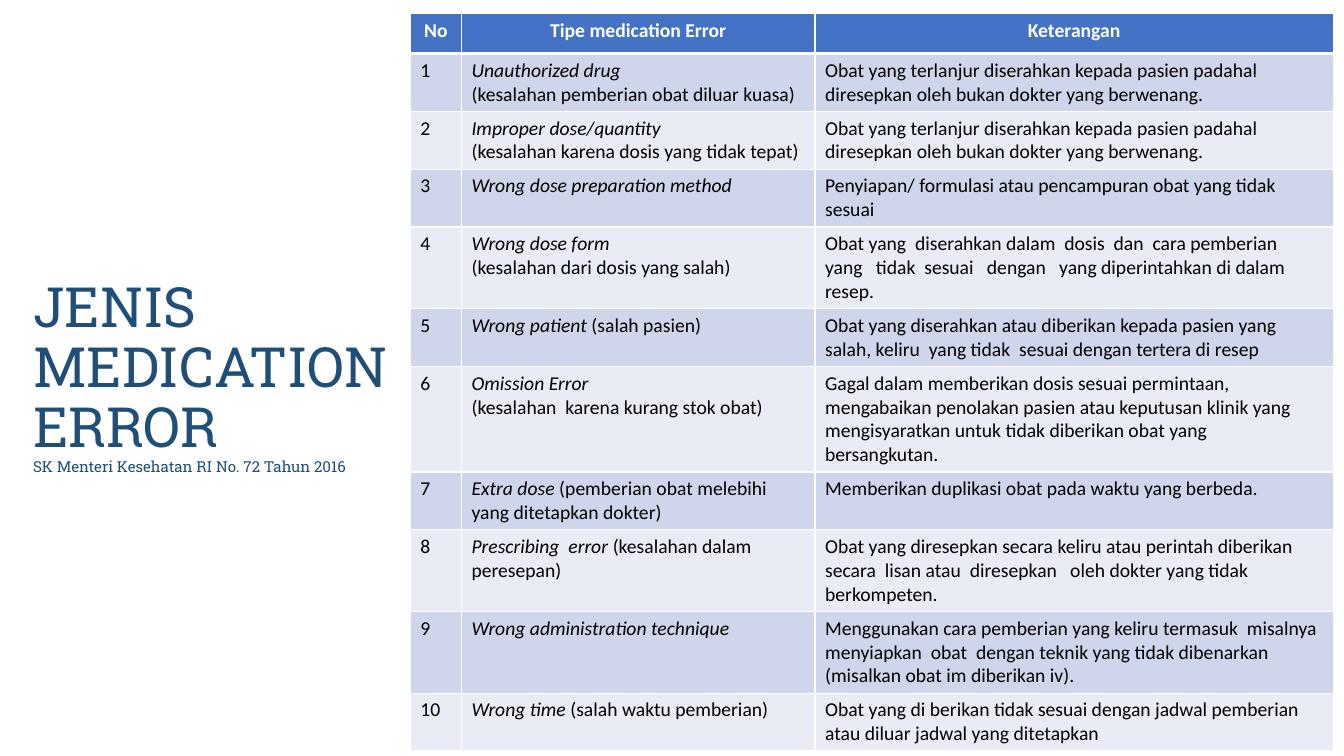
import copy

import pptx
import pptx.dml.color
import pptx.enum.text
import pptx.oxml
import pptx.oxml.ns
import pptx.util

Cm, Pt = pptx.util.Cm, pptx.util.Pt
RGBColor = pptx.dml.color.RGBColor
PP_ALIGN = pptx.enum.text.PP_ALIGN
qn = pptx.oxml.ns.qn

NAVY = RGBColor(0x1F, 0x4E, 0x79)
BLUE = RGBColor(0x44, 0x72, 0xC4)
BAND_DARK = RGBColor(0xCF, 0xD5, 0xEA)
BAND_LIGHT = RGBColor(0xE9, 0xEB, 0xF5)
WHITE = RGBColor(0xFF, 0xFF, 0xFF)
BLACK = RGBColor(0, 0, 0)

TITLE = [("JENIS MEDICATION ERROR", 39.6),
         ("SK Menteri Kesehatan RI No. 72 Tahun 2016", 10.8)]
HEADER = ["No", "Tipe medication Error", "Keterangan"]
# Italic term, plain explanation, description, number of text lines
ERRORS = [
    ("Unauthorized drug", "\n(kesalahan pemberian obat diluar kuasa)",
     "Obat yang terlanjur diserahkan kepada pasien padahal diresepkan oleh "
     "bukan dokter yang berwenang.", 2),
    ("Improper dose/quantity", "\n(kesalahan karena dosis yang tidak tepat)",
     "Obat yang terlanjur diserahkan kepada pasien padahal diresepkan oleh "
     "bukan dokter yang berwenang.", 2),
    ("Wrong dose preparation method", "",
     "Penyiapan/ formulasi atau pencampuran obat yang tidak sesuai", 2),
    ("Wrong dose form", "\n(kesalahan dari dosis yang salah)",
     "Obat yang  diserahkan dalam  dosis  dan  cara pemberian   yang   tidak  "
     "sesuai   dengan   yang diperintahkan di dalam resep.", 3),
    ("Wrong patient ", "(salah pasien)",
     "Obat yang diserahkan atau diberikan kepada pasien yang  salah, keliru  "
     "yang tidak  sesuai dengan tertera di resep", 2),
    ("Omission Error", "\n(kesalahan  karena kurang stok obat)",
     "Gagal dalam memberikan dosis sesuai permintaan, mengabaikan penolakan "
     "pasien atau keputusan klinik yang mengisyaratkan untuk tidak diberikan "
     "obat yang bersangkutan.", 4),
    ("Extra dose", " (pemberian obat melebihi yang ditetapkan dokter)",
     "Memberikan duplikasi obat pada waktu yang berbeda.", 2),
    ("Prescribing  error ", "(kesalahan dalam\nperesepan)",
     "Obat yang diresepkan secara keliru atau perintah diberikan  secara  "
     "lisan atau  diresepkan   oleh dokter yang tidak berkompeten.", 3),
    ("Wrong administration technique", "",
     "Menggunakan cara pemberian yang keliru termasuk  misalnya menyiapkan  "
     "obat  dengan teknik yang tidak dibenarkan (misalkan obat im diberikan "
     "iv).", 3),
    ("Wrong time ", "(salah waktu pemberian)",
     "Obat yang di berikan tidak sesuai dengan jadwal pemberian atau diluar "
     "jadwal yang ditetapkan", 2),
]

TITLE_BOX = {"left": Cm(0.58), "top": Cm(7.01), "width": Cm(11.76), "height": Cm(5.03)}
TABLE_LEFT, TABLE_TOP = Cm(10.34), Cm(0.35)
COLUMN_WIDTHS = [Cm(1.29), Cm(8.91), Cm(13.06)]
HEADER_HEIGHT = Cm(1)
LINE_HEIGHT, ROW_PADDING = Cm(0.58), Cm(0.25)
HEADER_FONT = {"name": "Calibri", "size": Pt(14), "bold": True}
BODY_FONT = {**HEADER_FONT, "bold": False}


def add_run(p, text, color, font):
    r = p.add_run()
    r.text = text
    r.font.color.rgb = color
    for name, value in font.items():
        setattr(r.font, name, value)
    return r


def add_borders(cell, bottom):
    tcPr = cell._tc.get_or_add_tcPr()
    for side, width in {"L": 1, "R": 1, "T": 1, "B": bottom}.items():
        tcPr.append(pptx.oxml.parse_xml(
            f'<a:ln{side} {pptx.oxml.ns.nsdecls("a")} w="{Pt(width)}"><a:solidFill>'
            f'<a:srgbClr val="{WHITE}"/></a:solidFill></a:ln{side}>'))


def fill_cell(cell, parts, fill, color, font, align=PP_ALIGN.LEFT, bottom=1):
    """Write (text, italic) parts; a line feed starts a new paragraph."""
    add_borders(cell, bottom)
    cell.fill.solid()
    cell.fill.fore_color.rgb = fill
    tf = cell.text_frame
    p = tf.paragraphs[0]
    p.alignment = align
    for text, italic in parts:
        for i, line in enumerate(text.split("\n")):
            if i:
                p = tf.add_paragraph()
                p.alignment = align
            if line:
                add_run(p, line, color, {**font, "italic": italic})


def add_title(slide):
    sp = slide.shapes.title
    for name, value in TITLE_BOX.items():
        setattr(sp, name, value)
    tf = sp.text_frame
    tf.word_wrap = True
    tf.auto_size = pptx.enum.text.MSO_AUTO_SIZE.NONE
    tf.vertical_anchor = pptx.enum.text.MSO_ANCHOR.MIDDLE
    p = tf.paragraphs[0]
    p.alignment = PP_ALIGN.LEFT
    p.line_spacing = 0.9
    for i, (text, size) in enumerate(TITLE):
        if i:
            p.add_line_break()
            p._p.find(qn("a:br")).append(copy.deepcopy(r._r.find(qn("a:rPr"))))
        r = add_run(p, text, NAVY, {"name": "Roboto Slab", "size": Pt(size)})


def add_error_table(slide):
    heights = [HEADER_HEIGHT] + [ROW_PADDING + LINE_HEIGHT * e[-1] for e in ERRORS]
    table = slide.shapes.add_table(len(heights), len(HEADER), TABLE_LEFT, TABLE_TOP,
                                   sum(COLUMN_WIDTHS), sum(heights)).table
    for column, width in zip(table.columns, COLUMN_WIDTHS):
        column.width = width
    for row, height in zip(table.rows, heights):
        row.height = height
    for cell, text in zip(table.rows[0].cells, HEADER):
        fill_cell(cell, [(text, False)], BLUE, WHITE, HEADER_FONT, PP_ALIGN.CENTER, 3)
    for n, (term, note, description, _) in enumerate(ERRORS, 1):
        fill = BAND_DARK if n % 2 else BAND_LIGHT
        contents = [[(str(n), False)], [(term, True), (note, False)], [(description, False)]]
        for cell, parts in zip(table.rows[n].cells, contents):
            fill_cell(cell, parts, fill, BLACK, BODY_FONT)


def main():
    prs = pptx.Presentation()
    prs.slide_width, prs.slide_height = Cm(33.87), Cm(19.05)
    slide = prs.slides.add_slide(prs.slide_layouts[5])
    add_title(slide)
    add_error_table(slide)
    prs.save("out.pptx")


if __name__ == "__main__":
    main()
